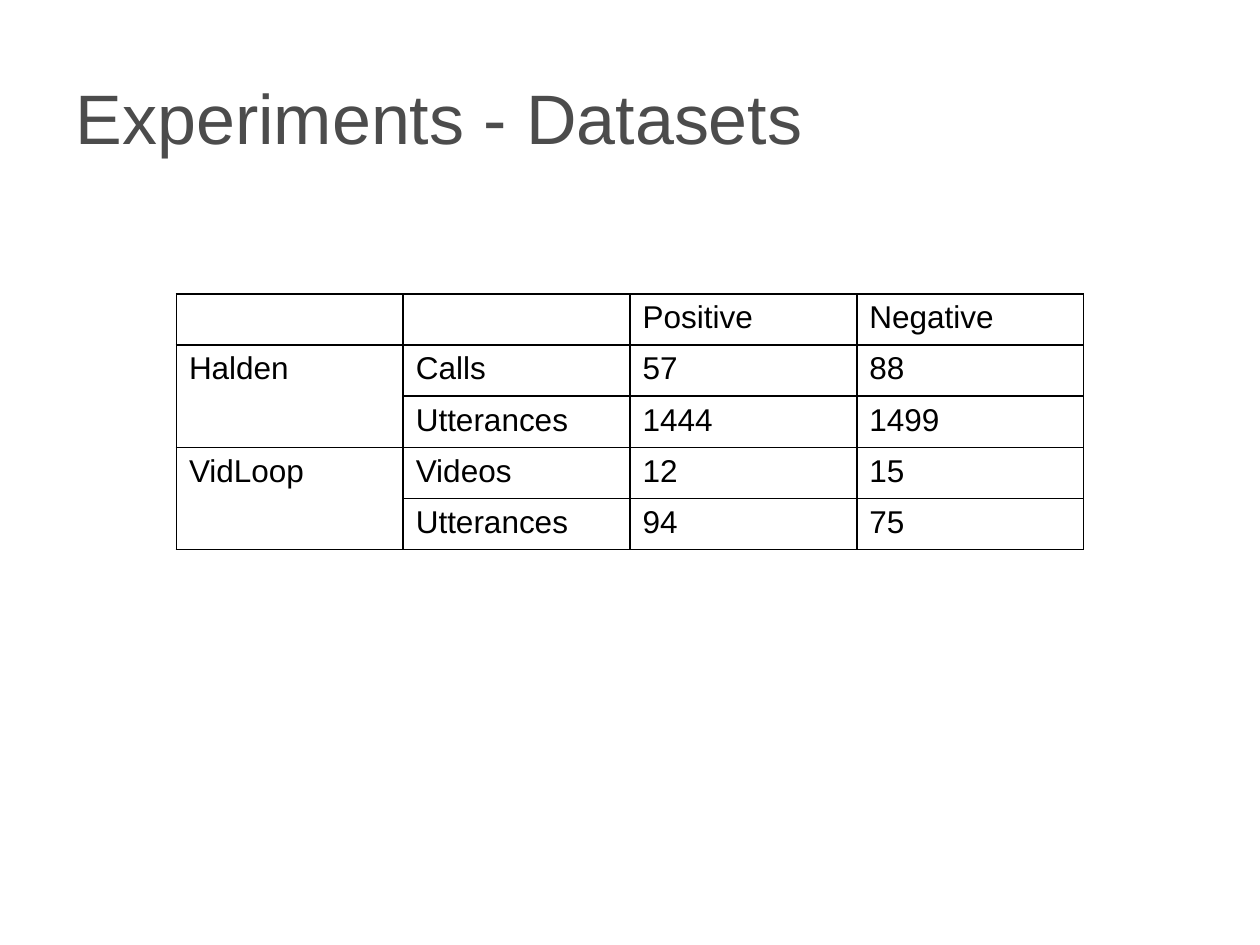
from lxml import etree
from pptx import Presentation
from pptx.dml.color import RGBColor
from pptx.enum.text import MSO_ANCHOR, PP_ALIGN
from pptx.oxml.ns import qn
from pptx.util import Pt

LEFT = PP_ALIGN.LEFT
MIDDLE = MSO_ANCHOR.MIDDLE
FACE = "Arial"
BLACK = "000000"
GREY = "4C4C4C"

ROWS = [
    ["", "", "Positive", "Negative"],
    ["Halden", "Calls", "57", "88"],
    ["", "Utterances", "1444", "1499"],
    ["VidLoop", "Videos", "12", "15"],
    ["", "Utterances", "94", "75"],
]
GROUPS = [1, 3]


def paint(color, value):
    color.rgb = RGBColor.from_string(value)


def style(para, size, color):
    para.alignment = LEFT
    for run in para.runs:
        run.font.name = FACE
        run.font.size = Pt(size)
        paint(run.font.color, color)


def border(cell, color, width):
    props = cell._tc.get_or_add_tcPr()
    for side in ("a:lnL", "a:lnR", "a:lnT", "a:lnB"):
        line = etree.SubElement(props, qn(side), w=str(Pt(width)))
        fill = etree.SubElement(line, qn("a:solidFill"))
        etree.SubElement(fill, qn("a:srgbClr"), val=color)


def add_title(slide, text, left, top, width, height):
    title = slide.shapes.title
    title.left, title.top = Pt(left), Pt(top)
    title.width, title.height = Pt(width), Pt(height)
    frame = title.text_frame
    frame.text = text
    frame.vertical_anchor = MIDDLE
    style(frame.paragraphs[0], 40, GREY)


def add_counts(slide, left, top, width, height):
    rows, cols = len(ROWS), len(ROWS[0])
    table = slide.shapes.add_table(
        rows, cols, Pt(left), Pt(top), Pt(width), Pt(height)
    ).table
    table.first_row = False
    table.horz_banding = False
    for row, texts in zip(table.rows, ROWS):
        for cell, text in zip(row.cells, texts):
            cell.text_frame.text = text
            style(cell.text_frame.paragraphs[0], 18, BLACK)
            border(cell, BLACK, 1)
            cell.fill.background()
    for first in GROUPS:
        table.cell(first, 0).merge(table.cell(first + 1, 0))


def main():
    deck = Presentation()
    deck.slide_width, deck.slide_height = Pt(720), Pt(540)
    slide = deck.slides.add_slide(deck.slide_layouts[5])
    add_title(slide, "Experiments - Datasets", 36, 21.6, 648, 90)
    add_counts(slide, 100.8, 168, 518.4, 146)
    deck.save("out.pptx")


if __name__ == "__main__":
    main()
